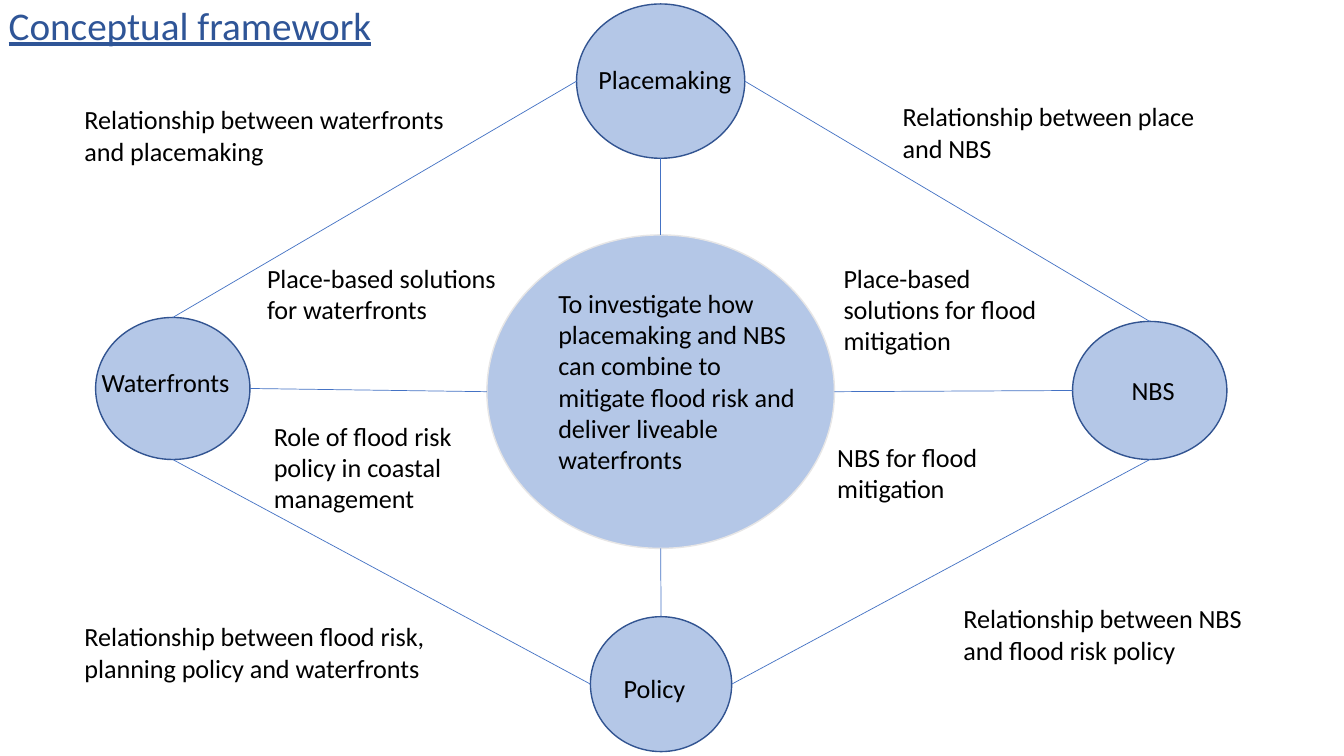
from dataclasses import dataclass

from lxml import etree
from pptx import Presentation
from pptx import util as u
from pptx.dml.color import RGBColor
from pptx.enum import shapes, text
from pptx.oxml.ns import qn

CIRCLES = {
    "core": (12.27, 5.92, 8.76, 7.9),
    "waterfronts": (2.41, 8.0, 3.89, 3.58),
    "policy": (14.88, 15.54, 3.56, 3.4),
    "nbs": (27.03, 8.1, 3.89, 3.48),
    "placemaking": (14.53, 0.1, 4.24, 3.89),
}

LINKS = [
    ("waterfronts", "top", "placemaking", "left"),
    ("placemaking", "right", "nbs", "top"),
    ("nbs", "bottom", "policy", "right"),
    ("waterfronts", "bottom", "policy", "left"),
    ("placemaking", "bottom", "core", "top"),
    ("core", "right", "nbs", "left"),
    ("waterfronts", "right", "core", "left"),
    ("core", "bottom", "policy", "top"),
]

TITLE = ("Conceptual framework", (-0.03, -0.1, 11.96, 1.45))
CENTRED = "Placemaking"
LABELS = [
    ("To investigate how placemaking and NBS can combine to mitigate "
     "flood risk and deliver liveable waterfronts", (13.82, 7.11, 6.63, 5.94)),
    (CENTRED, (14.73, 1.47, 4.05, 1.07)),
    ("Place-based solutions for flood mitigation", (21.01, 6.48, 5.49, 2.69)),
    ("NBS for flood\nmitigation", (20.85, 11.0, 12.19, 1.88)),
    ("Role of flood risk policy in coastal management", (6.65, 10.46, 5.74, 2.69)),
    ("Place-based solutions for waterfronts", (6.48, 6.48, 6.71, 2.69)),
    ("NBS", (28.27, 9.3, 2.64, 1.07)),
    ("Policy", (15.47, 16.81, 3.33, 1.07)),
    ("Waterfronts", (2.31, 9.12, 3.89, 1.07)),
    ("Relationship between place and NBS", (22.5, 2.41, 8.41, 1.88)),
    ("Relationship between NBS and flood risk policy", (24.03, 15.06, 8.48, 1.88)),
    ("Relationship between flood risk, planning policy and waterfronts",
     (1.88, 15.52, 9.5, 1.88)),
    ("Relationship between waterfronts and placemaking", (1.88, 2.49, 9.83, 1.88)),
]


@dataclass(frozen=True)
class Theme:
    font: str = "Calibri"
    title_size: float = 28
    label_size: float = 18.67
    title: str = "2F5597"
    label: str = "000000"
    fill: str = "B4C7E7"
    rim: str = "325491"
    core_rim: str = "E7E6E6"
    link: str = "4472C4"
    rim_width: float = 1
    link_width: float = 0.5


THEME = Theme()


def lengths(values):
    return [u.Cm(value) for value in values]


def anchor(circle, side):
    left, top, width, height = CIRCLES[circle]
    across, down = {"top": (0.5, 0), "left": (0, 0.5),
                    "bottom": (0.5, 1), "right": (1, 0.5)}[side]
    return lengths((left + across * width, top + down * height))


def add_circle(page, name):
    circle = page.shapes.add_shape(shapes.MSO_SHAPE.OVAL, *lengths(CIRCLES[name]))
    circle.shadow.inherit = False
    circle.fill.solid()
    circle.fill.fore_color.rgb = RGBColor.from_string(THEME.fill)
    rim = THEME.core_rim if name == "core" else THEME.rim
    circle.line.color.rgb = RGBColor.from_string(rim)
    circle.line.width = u.Pt(THEME.rim_width)


def add_link(page, start, start_side, end, end_side):
    link = page.shapes.add_connector(
        shapes.MSO_CONNECTOR.STRAIGHT, *anchor(start, start_side), *anchor(end, end_side))
    link.line.color.rgb = RGBColor.from_string(THEME.link)
    link.line.width = u.Pt(THEME.link_width)
    etree.SubElement(link._element.spPr, qn("a:effectLst"))


def add_text(page, words, place, size, color, underline=None):
    box = page.shapes.add_textbox(*lengths(place))
    frame = box.text_frame
    frame.word_wrap = True
    frame.auto_size = text.MSO_AUTO_SIZE.SHAPE_TO_FIT_TEXT
    frame.text = words
    for para in frame.paragraphs:
        para.alignment = text.PP_ALIGN.CENTER if words == CENTRED else text.PP_ALIGN.LEFT
        para.font.name = THEME.font
        para.font.size = u.Pt(size)
        para.font.color.rgb = RGBColor.from_string(color)
        para.font.underline = underline


def main():
    deck = Presentation()
    deck.slide_width, deck.slide_height = lengths((33.87, 19.05))
    page = deck.slides.add_slide(deck.slide_layouts[6])
    for name in CIRCLES:
        add_circle(page, name)
    for link in LINKS:
        add_link(page, *link)
    for words, place in LABELS:
        add_text(page, words, place, THEME.label_size, THEME.label)
    add_text(page, *TITLE, THEME.title_size, THEME.title, underline=True)
    deck.save("out.pptx")


if __name__ == "__main__":
    main()
